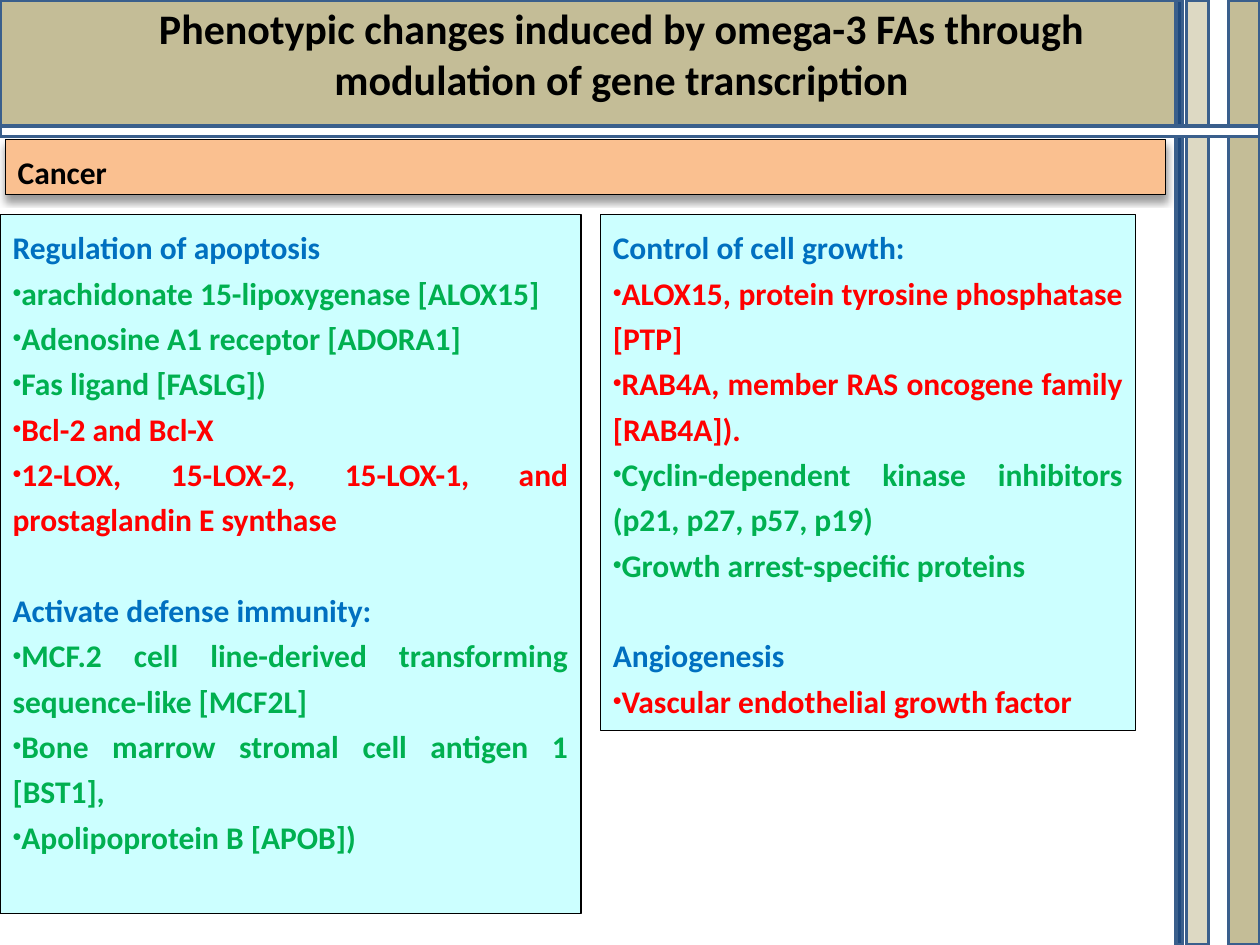
from dataclasses import dataclass

from lxml import etree
from pptx import Presentation
from pptx.dml.color import RGBColor
from pptx.enum import shapes, text
from pptx.oxml import ns
from pptx.util import Pt


@dataclass(frozen=True)
class Theme:
    font: str = "Calibri"
    head: int = 24
    body: int = 18
    lead: float = 1.2
    gap: float = 26
    ink: str = "000000"
    tan: str = "C4BD97"
    sand: str = "DDD9C3"
    navy: str = "1F497D"
    edge: str = "3A5F8C"
    white: str = "FFFFFF"
    peach: str = "FAC090"
    aqua: str = "CCFFFF"
    blue: str = "0070C0"
    green: str = "00B050"
    red: str = "FF0000"


T = Theme()

BARS = [
    ((0, 0, 672, 72), T.tan),
    ((702, 0, 18, 540), T.tan),
    ((678, 0, 12.5, 540), T.sand),
    ((672, 0, 3.6, 540), T.navy),
    ((0, 72, 720, 6), T.white),
]

TITLE = [
    "Phenotypic changes induced by omega-3 FAs through",
    "modulation of gene transcription",
]

LEFT = [
    ("Regulation of apoptosis", [
        ("arachidonate 15-lipoxygenase [ALOX15]", T.green),
        ("Adenosine A1 receptor [ADORA1]", T.green),
        ("Fas ligand [FASLG])", T.green),
        ("Bcl-2 and Bcl-X", T.red),
        ("12-LOX, 15-LOX-2, 15-LOX-1, and prostaglandin E synthase", T.red),
    ]),
    ("Activate defense immunity:", [
        ("MCF.2 cell line-derived transforming sequence-like [MCF2L]", T.green),
        ("Bone marrow stromal cell antigen 1 [BST1],", T.green),
        ("Apolipoprotein B [APOB])", T.green),
    ]),
]

RIGHT = [
    ("Control of cell growth:", [
        ("ALOX15, protein tyrosine phosphatase [PTP]", T.red),
        ("RAB4A, member RAS oncogene family [RAB4A]).", T.red),
        ("Cyclin-dependent kinase inhibitors (p21, p27, p57, p19)", T.green),
        ("Growth arrest-specific proteins", T.green),
    ]),
    ("Angiogenesis", [
        ("Vascular endothelial growth factor", T.red),
    ]),
]


def place(shape, box):
    shape.left, shape.top, shape.width, shape.height = map(Pt, box)


def paint(shape, fill, line, width):
    shape.fill.solid()
    shape.fill.fore_color.rgb = RGBColor.from_string(fill)
    shape.line.color.rgb = RGBColor.from_string(line)
    shape.line.width = Pt(width)


def block(slide, box, fill, line, width):
    shape = slide.shapes.add_shape(shapes.MSO_SHAPE.RECTANGLE, *map(Pt, box))
    paint(shape, fill, line, width)
    shape.shadow.inherit = False
    return shape


def shade(shape):
    effect = shape._element.spPr.find(ns.qn("a:effectLst"))
    outer = etree.SubElement(effect, ns.qn("a:outerShdw"), blurRad=str(Pt(4)),
                             dist=str(Pt(3)), dir="5400000", rotWithShape="0")
    color = etree.SubElement(outer, ns.qn("a:srgbClr"), val=T.ink)
    etree.SubElement(color, ns.qn("a:alpha"), val="40000")


def setup(shape):
    frame = shape.text_frame
    frame.word_wrap = True
    frame.auto_size = text.MSO_AUTO_SIZE.NONE
    frame.vertical_anchor = text.MSO_ANCHOR.TOP
    return frame


def mark(para, dot):
    props = para._p.get_or_add_pPr()
    props.set("marL", "0")
    props.set("indent", "0")
    if dot:
        etree.SubElement(props, ns.qn("a:buSzPct"), val="80000")
        etree.SubElement(props, ns.qn("a:buChar"), char="•")
    else:
        etree.SubElement(props, ns.qn("a:buNone"))


def style(para, words, color, size=T.body, lead=T.lead,
          align=text.PP_ALIGN.JUSTIFY, before=0):
    para.text = words
    para.alignment = align
    para.line_spacing = lead
    para.space_before = Pt(before)
    font = para.font
    font.name, font.size, font.bold = T.font, Pt(size), True
    font.color.rgb = RGBColor.from_string(color)


def write(frame, lines):
    for i, (words, color, dot, before) in enumerate(lines):
        para = frame.add_paragraph() if i else frame.paragraphs[0]
        mark(para, dot)
        style(para, words, color, before=before)


def panel(shape, box, groups):
    place(shape, box)
    paint(shape, T.aqua, T.ink, 0.75)
    lines = []
    for head, items in groups:
        lines.append((head, T.blue, False, T.gap if lines else 0))
        lines += [(words, color, True, 0) for words, color in items]
    write(setup(shape), lines)


def title(shape, box):
    place(shape, box)
    frame = setup(shape)
    for i, words in enumerate(TITLE):
        para = frame.add_paragraph() if i else frame.paragraphs[0]
        style(para, words, T.ink, T.head, 1.0, text.PP_ALIGN.CENTER)


def front(shape):
    shape._element.getparent().append(shape._element)


def main():
    deck = Presentation()
    deck.slide_width, deck.slide_height = Pt(720), Pt(540)
    slide = deck.slides.add_slide(deck.slide_layouts[3])
    head, left, right = slide.placeholders

    for box, fill in BARS:
        block(slide, box, fill, T.edge, 2)

    title(head, (78.5, -2, 553.5, 65.5))
    front(head)

    topic = block(slide, (3, 79.5, 663, 31.5), T.peach, T.ink, 0.75)
    shade(topic)
    write(setup(topic), [("Cancer", T.ink, False, 0)])

    panel(left, (0, 122.5, 332, 399.5), LEFT)
    panel(right, (343, 122.5, 306, 295), RIGHT)
    front(left)
    front(right)

    deck.save("out.pptx")


if __name__ == "__main__":
    main()
